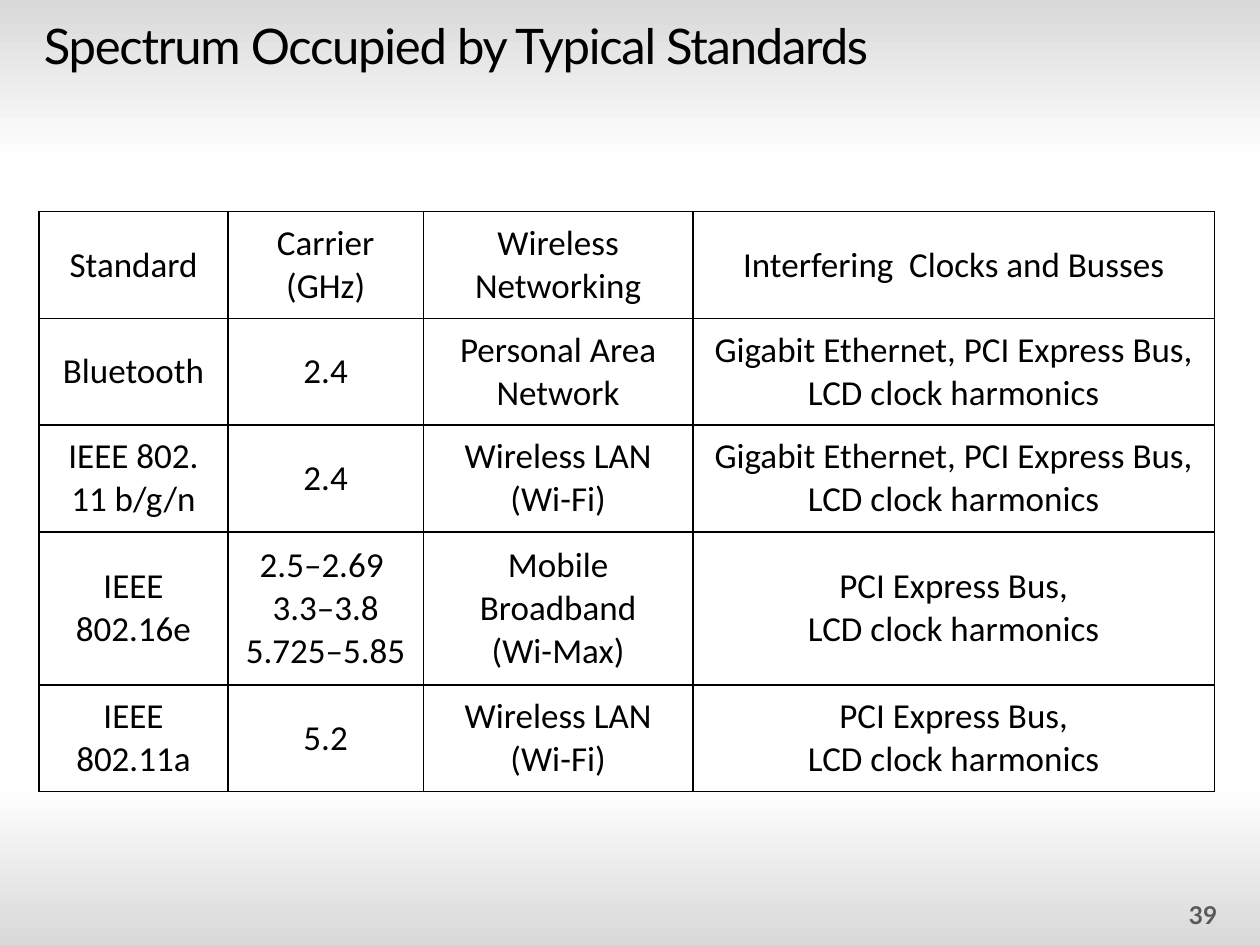
from lxml import etree
from pptx import Presentation
from pptx import util as u
from pptx.dml.color import RGBColor
from pptx.enum import text
from pptx.oxml import ns

COLORS = {"ink": "000000", "number": "595959", "edge": "D9D9D9", "middle": "FFFFFF"}
WIDTH, HEIGHT = u.Inches(10), u.Inches(7.5)

# Each cell is one string: \n starts a paragraph, \v breaks a line
PCI = "PCI Express Bus,\vLCD clock harmonics"
ETHERNET = "Gigabit Ethernet, PCI Express Bus, LCD clock harmonics"
WIFI = "Wireless LAN (Wi-Fi)"
STANDARDS = [
    ("Standard", "Carrier (GHz)", "Wireless Networking", "Interfering  Clocks and Busses"),
    ("Bluetooth", "2.4", "Personal Area Network", ETHERNET),
    ("IEEE 802. 11 b/g/n", "2.4", WIFI, ETHERNET),
    ("IEEE 802.16e", "2.5–2.69 \v3.3–3.8\n5.725–5.85", "Mobile Broadband\v(Wi-Max)", PCI),
    ("IEEE 802.11a", "5.2", WIFI, PCI),
]
COLUMN_SHARES = (1.5, 1.55, 2.14, 4.14)
ROW_SHARES = (0.85, 0.85, 0.85, 1.22, 0.85)


def share(left, top, width, height):
    """Turn shares of the slide into a box of lengths."""
    return (int(WIDTH * left), int(HEIGHT * top), int(WIDTH * width), int(HEIGHT * height))


def element(parent, tag, **attributes):
    return etree.SubElement(parent, ns.qn(tag), attributes)


def style(para, name, size, color, align, bold=False):
    para.alignment = align
    para.font.name, para.font.size, para.font.bold = name, u.Pt(size), bold
    para.font.color.rgb = RGBColor.from_string(COLORS[color])


def paint_background(page):
    page.background.fill.gradient()
    gradient = page.element.find(".//" + ns.qn("a:gradFill"))
    for child in list(gradient):
        gradient.remove(child)
    stops = element(gradient, "a:gsLst")
    for percent, color in ((0, "edge"), (17, "middle"), (83, "middle"), (100, "edge")):
        stop = element(stops, "a:gs", pos=str(percent * 1000))
        element(stop, "a:srgbClr", val=COLORS[color])
    element(gradient, "a:lin", ang=str(90 * 60000), scaled="0")


def add_text(page, area, words, anchor):
    frame = page.shapes.add_textbox(*area).text_frame
    frame.word_wrap = True
    frame.vertical_anchor = anchor
    frame.text = words
    return frame.paragraphs[0]


def add_title(page, area, words):
    para = add_text(page, area, words, text.MSO_ANCHOR.TOP)
    style(para, "Lato", 28, "ink", text.PP_ALIGN.LEFT)
    para.runs[0].font._element.set("spc", "-70")


def add_page_number(page, area, number):
    para = add_text(page, area, number, text.MSO_ANCHOR.MIDDLE)
    style(para, "Lato", 14, "number", text.PP_ALIGN.RIGHT, bold=True)


def add_borders(cell):
    properties = cell._tc.get_or_add_tcPr()
    for place, side in enumerate(("a:lnL", "a:lnR", "a:lnT", "a:lnB")):
        line = etree.Element(ns.qn(side), {"w": str(u.Pt(1))})
        element(element(line, "a:solidFill"), "a:srgbClr", val=COLORS["ink"])
        properties.insert(place, line)


def add_standards_table(page, area):
    left, top, width, height = area
    table = page.shapes.add_table(len(STANDARDS), len(COLUMN_SHARES), *area).table
    table.first_row = table.horz_banding = False
    for column, part in zip(table.columns, COLUMN_SHARES):
        column.width = int(width * part / sum(COLUMN_SHARES))
    for row, part, entries in zip(table.rows, ROW_SHARES, STANDARDS):
        row.height = int(height * part / sum(ROW_SHARES))
        for cell, entry in zip(row.cells, entries):
            cell.text = entry
            cell.vertical_anchor = text.MSO_ANCHOR.MIDDLE
            cell.fill.background()
            add_borders(cell)
            for para in cell.text_frame.paragraphs:
                style(para, "Calibri", 20, "ink", text.PP_ALIGN.CENTER)


def main():
    deck = Presentation()
    deck.slide_width, deck.slide_height = WIDTH, HEIGHT
    page = deck.slides.add_slide(deck.slide_layouts[6])
    paint_background(page)
    add_title(page, share(0.025, 0.01, 0.95, 0.09), "Spectrum Occupied by Typical Standards")
    add_page_number(page, share(0.743, 0.945, 0.233, 0.045), "39")
    add_standards_table(page, share(0.031, 0.224, 0.933, 0.614))
    deck.save("out.pptx")


if __name__ == "__main__":
    main()
